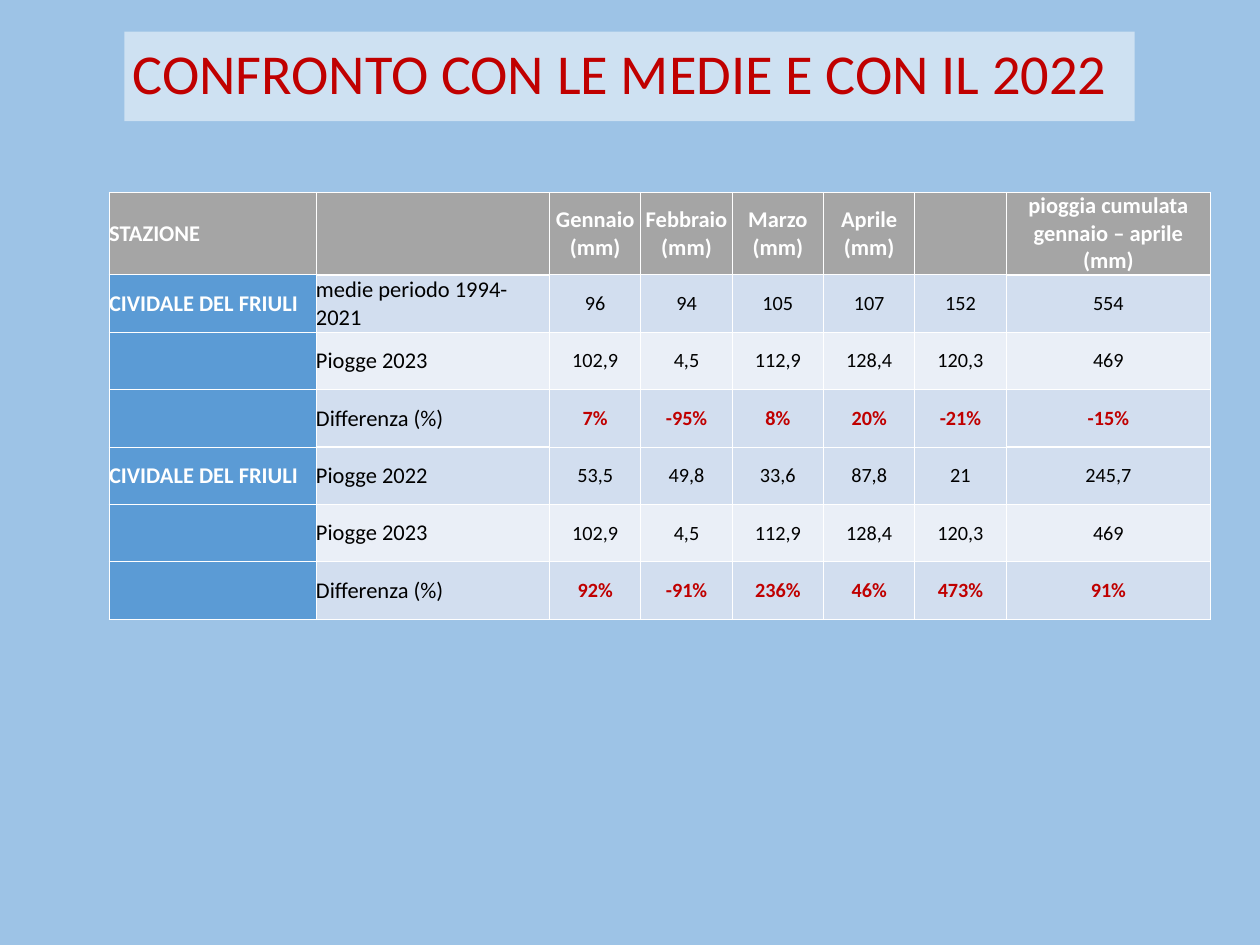
from lxml.etree import SubElement
from pptx import Presentation
from pptx.dml.color import RGBColor
from pptx.enum.text import MSO_ANCHOR, MSO_AUTO_SIZE, PP_ALIGN
from pptx.oxml.ns import qn
from pptx.util import Inches, Pt

FONT = "Calibri"
COLORS = {
    "background": "9DC3E6",
    "white": "FFFFFF",
    "black": "000000",
    "red": "C00000",
    "header": "A5A5A5",
    "station": "5B9BD5",
    "band_dark": "D2DEEF",
    "band_light": "EAEFF7",
}

COLUMN_WIDTHS = [2.56, 2.89] + [1.13] * 5 + [2.53]
HEADER_HEIGHT, ROW_HEIGHT = 1.01, 0.71
THICK_COLUMNS = (1, 7)
BLOCK_STARTS = (1, 4)  # first row of each comparison
RAINFALL = [
    ["STAZIONE", "", "Gennaio (mm)", "Febbraio (mm)", "Marzo (mm)", "Aprile (mm)", "",
     "pioggia cumulata gennaio – aprile (mm)"],
    ["CIVIDALE DEL FRIULI", "medie periodo 1994-2021", "96", "94", "105", "107", "152", "554"],
    ["", "Piogge 2023", "102,9", "4,5", "112,9", "128,4", "120,3", "469"],
    ["", "Differenza (%)", "7%", "-95%", "8%", "20%", "-21%", "-15%"],
    ["CIVIDALE DEL FRIULI", "Piogge 2022", "53,5", "49,8", "33,6", "87,8", "21", "245,7"],
    ["", "Piogge 2023", "102,9", "4,5", "112,9", "128,4", "120,3", "469"],
    ["", "Differenza (%)", "92%", "-91%", "236%", "46%", "473%", "91%"],
]


def color(name):
    return RGBColor.from_string(COLORS[name])


def set_font(paragraph, size, color_name, bold=False):
    font = paragraph.font
    font.name, font.size, font.bold = FONT, Pt(size), bold
    font.color.rgb = color(color_name)


def add_title(slide, text):
    title = slide.shapes.title
    title.left, title.top = Inches(1.54), Inches(0.39)
    title.width, title.height = Inches(12.5), Inches(1.11)
    title.fill.solid()
    title.fill.fore_color.rgb = color("white")
    # Half-transparent white panel
    white = title.fill._xPr.find(qn("a:solidFill"))[0]
    SubElement(white, qn("a:alpha"), val="50000")
    frame = title.text_frame
    frame.text = text
    frame.word_wrap = True
    frame.auto_size = MSO_AUTO_SIZE.NONE
    frame.vertical_anchor = MSO_ANCHOR.MIDDLE
    paragraph = frame.paragraphs[0]
    paragraph.alignment = PP_ALIGN.LEFT
    paragraph.line_spacing = 0.9
    set_font(paragraph, 50.2, "red")


def set_borders(cell, top, bottom):
    properties = cell._tc.get_or_add_tcPr()
    for side, width in (("L", 1), ("R", 1), ("T", top), ("B", bottom)):
        line = SubElement(properties, qn(f"a:ln{side}"), w=str(Pt(width)))
        fill = SubElement(line, qn("a:solidFill"))
        SubElement(fill, qn("a:srgbClr"), val=COLORS["white"])


def cell_look(row, column):
    """Return fill, text colour, size and boldness of a cell."""
    if row == 0:
        return "header", "white", 20, True
    if column == 0:
        return "station", "white", 20, True
    band = "band_light" if row % 3 == 2 else "band_dark"
    if column == 1:
        return band, "black", 20, False
    is_difference = row % 3 == 0
    return band, "red" if is_difference else "black", 18, is_difference


def format_cell(cell, row, column, text):
    fill, text_color, size, bold = cell_look(row, column)
    thick = column in THICK_COLUMNS
    set_borders(
        cell,
        top=1.5 if thick and row in BLOCK_STARTS else 1,
        bottom=1.5 if thick and row + 1 in BLOCK_STARTS else 1,
    )
    cell.fill.solid()
    cell.fill.fore_color.rgb = color(fill)
    cell.margin_left = cell.margin_right = cell.margin_top = cell.margin_bottom = 0
    cell.vertical_anchor = MSO_ANCHOR.MIDDLE
    cell.text = text
    paragraph = cell.text_frame.paragraphs[0]
    paragraph.alignment = PP_ALIGN.CENTER if column > 1 else PP_ALIGN.LEFT
    set_font(paragraph, size, text_color, bold)


def add_rainfall_table(slide):
    heights = [HEADER_HEIGHT] + [ROW_HEIGHT] * (len(RAINFALL) - 1)
    table = slide.shapes.add_table(
        len(heights), len(COLUMN_WIDTHS), Inches(1.35), Inches(2.38),
        Inches(sum(COLUMN_WIDTHS)), Inches(sum(heights)),
    ).table
    table.first_row = table.horz_banding = False
    for column, width in zip(table.columns, COLUMN_WIDTHS):
        column.width = Inches(width)
    for row, height in zip(table.rows, heights):
        row.height = Inches(height)
    for row, texts in enumerate(RAINFALL):
        for column, text in enumerate(texts):
            format_cell(table.cell(row, column), row, column, text)


def main():
    presentation = Presentation()
    presentation.slide_width = Inches(15.59)
    presentation.slide_height = Inches(11.69)
    slide = presentation.slides.add_slide(presentation.slide_layouts[5])
    slide.background.fill.solid()
    slide.background.fill.fore_color.rgb = color("background")

    add_title(slide, "CONFRONTO CON LE MEDIE E CON IL 2022")
    add_rainfall_table(slide)
    presentation.save("out.pptx")


if __name__ == "__main__":
    main()
